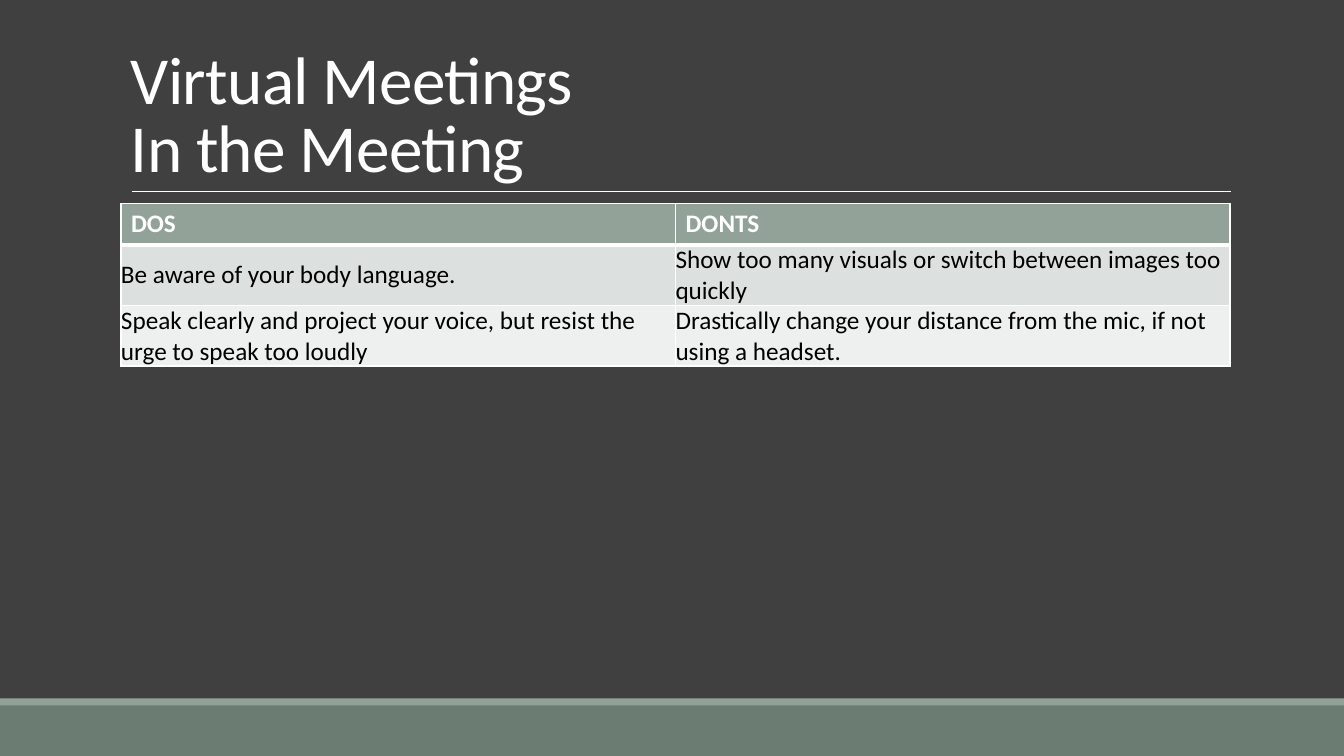
from pptx import Presentation
from pptx import util as u
from pptx.dml.color import RGBColor
from pptx.enum import shapes, text
from pptx.oxml import parse_xml
from pptx.oxml.ns import nsdecls

TITLE = ["Virtual Meetings", "In the Meeting"]
ROWS = [
    ("DOS", "DONTS"),
    ("Be aware of your body language.",
     "Show too many visuals or switch between images too quickly"),
    ("Speak clearly and project your voice, but resist the urge to speak too loudly",
     "Drastically change your distance from the mic, if not using a headset."),
]
HEX = {"back": "404040", "band": "6B7D72", "trim": "93A299",
       "white": "FFFFFF", "black": "000000", "odd": "DCE0DE", "even": "EEF0EF"}
FONT = "Calibri"
WIDE, HIGH = 13.33, 7.5
LEFT, SPAN = 1.2, 11
HEAD, BODY = 0.41, 0.6
BAND, TRIM = 0.5, 0.07


def tint(name):
    return RGBColor.from_string(HEX[name])


def write(para, words, size, color, bold=False):
    run = para.add_run()
    run.text = words
    font = run.font
    font.name, font.size, font.bold = FONT, u.Pt(size), bold
    font.color.rgb = tint(color)
    return run


def add_bar(slide, top, tall, color):
    bar = slide.shapes.add_shape(shapes.MSO_SHAPE.RECTANGLE, 0, u.Inches(top),
                                 u.Inches(WIDE), u.Inches(tall))
    bar.shadow.inherit = False
    bar.fill.solid()
    bar.fill.fore_color.rgb = tint(color)
    bar.line.fill.background()


def add_rule(slide):
    y = u.Inches(1.9)
    rule = slide.shapes.add_connector(shapes.MSO_CONNECTOR.STRAIGHT,
                                      u.Inches(1.31), y, u.Inches(12.21), y)
    rule.line.color.rgb = tint("white")
    rule.line.width = u.Pt(0.5)
    rule._element.spPr.append(parse_xml(f"<a:effectLst {nsdecls('a')}/>"))


def add_title(slide):
    box = slide.shapes.add_textbox(u.Inches(LEFT), u.Inches(0.31),
                                   u.Inches(SPAN), u.Inches(1.59))
    frame = box.text_frame
    frame.word_wrap = True
    frame.vertical_anchor = text.MSO_ANCHOR.BOTTOM
    para = frame.paragraphs[0]
    para.line_spacing = 0.85
    for i, words in enumerate(TITLE):
        if i:
            para.add_line_break()
        run = write(para, words, 48, "white")
        run.font._element.set("spc", "-50")


def edge(cell, base):
    """Draw white cell borders, with the given width in points below."""
    props = cell._tc.get_or_add_tcPr()
    for i, (side, width) in enumerate(zip("LRTB", (1, 1, 1, base))):
        props.insert(i, parse_xml(
            f'<a:ln{side} {nsdecls("a")} w="{u.Pt(width)}"><a:solidFill>'
            f'<a:srgbClr val="{HEX["white"]}"/></a:solidFill></a:ln{side}>'))


def add_grid(slide):
    tall = HEAD + BODY * (len(ROWS) - 1)
    grid = slide.shapes.add_table(len(ROWS), len(ROWS[0]), u.Inches(LEFT), u.Inches(2.02),
                                  u.Inches(SPAN), u.Inches(tall)).table
    for r, row in enumerate(ROWS):
        head = r == 0
        grid.rows[r].height = u.Inches(HEAD if head else BODY)
        for c, words in enumerate(row):
            cell = grid.cell(r, c)
            cell.margin_left = cell.margin_right = u.Inches(0.1 if head else 0)
            cell.margin_top = cell.margin_bottom = u.Inches(0.05 if head else 0)
            cell.vertical_anchor = text.MSO_ANCHOR.TOP if head else text.MSO_ANCHOR.MIDDLE
            cell.fill.solid()
            cell.fill.fore_color.rgb = tint("trim" if head else "odd" if r % 2 else "even")
            edge(cell, 3 if head else 1)
            write(cell.text_frame.paragraphs[0], words, 18,
                  "white" if head else "black", head)


def main():
    deck = Presentation()
    deck.slide_width, deck.slide_height = u.Inches(WIDE), u.Inches(HIGH)
    slide = deck.slides.add_slide(deck.slide_layouts[6])
    slide.background.fill.solid()
    slide.background.fill.fore_color.rgb = tint("back")
    add_bar(slide, HIGH - BAND, BAND, "band")
    add_bar(slide, HIGH - BAND - TRIM, TRIM, "trim")
    add_rule(slide)
    add_title(slide)
    add_grid(slide)
    deck.save("out.pptx")


if __name__ == "__main__":
    main()
